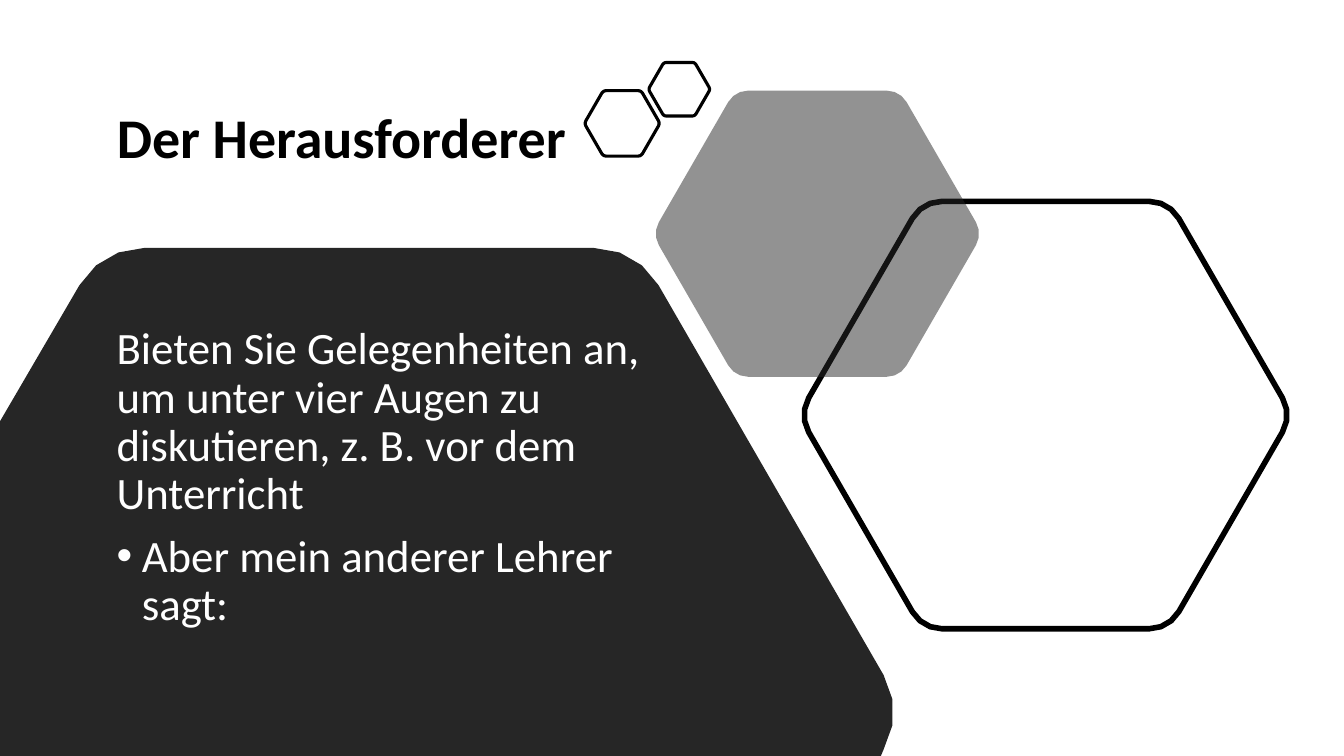
"""Build the slide on the challenger learner type."""
from math import cos, radians, sin, sqrt

from lxml.etree import SubElement
from pptx import Presentation
from pptx.dml.color import RGBColor
from pptx.enum.text import MSO_ANCHOR, MSO_AUTO_SIZE, PP_ALIGN
from pptx.oxml.ns import qn
from pptx.util import Cm, Pt

WIDE, HIGH = 33.87, 19.05
ROUND = 0.08


def paint(color, tone):
    """Set a colour from a hex string."""
    color.rgb = RGBColor.from_string(tone)


def corners(x, y, high):
    """Return the points of a regular hexagon with rounded corners."""
    side = high / sqrt(3)
    bend = ROUND * side * sqrt(3)
    reach = side - bend * 2 / sqrt(3)
    points = []
    for turn in range(240, 600, 60):
        for step in (-30, -10, 10, 30):
            arc = radians(turn + step)
            points.append((x + reach * cos(radians(turn)) + bend * cos(arc),
                           y + reach * sin(radians(turn)) + bend * sin(arc)))
    return points


def hexagon(slide, x, y, high, fill=None, line=None, alpha=None, edge=()):
    """Draw a rounded hexagon, closed along edge points where the slide ends."""
    points = [p for p in corners(x, y, high) if p[0] >= 0 and p[1] <= HIGH]
    points = [(Cm(a), Cm(b)) for a, b in points + list(edge)]
    pen = slide.shapes.build_freeform(*points[0], scale=1.0)
    pen.add_line_segments(points[1:], close=True)
    shape = pen.convert_to_shape()
    shape.shadow.inherit = False
    if fill:
        shape.fill.solid()
        paint(shape.fill.fore_color, fill)
    else:
        shape.fill.background()
    if alpha:
        tint = shape.element.spPr.find(qn("a:solidFill"))[0]
        SubElement(tint, qn("a:alpha"), val=str(alpha * 1000))
    if line:
        paint(shape.line.color, "000000")
        shape.line.width = Pt(line)
    else:
        shape.line.fill.background()


def bullet(para):
    """Give a paragraph a round bullet with a hanging indent."""
    props = para._p.get_or_add_pPr()
    props.set("marL", str(Cm(0.635)))
    props.set("indent", str(Cm(-0.635)))
    SubElement(props, qn("a:buFont"), typeface="Arial")
    SubElement(props, qn("a:buChar"), char="•")


def write(para, text, size, tone, bold=False, dot=False):
    """Fill and format one paragraph."""
    para.text = text
    para.alignment = PP_ALIGN.LEFT
    para.line_spacing = 0.9
    if dot:
        para.space_before = Pt(10)
        bullet(para)
    para.font.name = "Calibri"
    para.font.size = Pt(size)
    para.font.bold = bold
    paint(para.font.color, tone)


def place(shape, left, top, width, height, anchor):
    """Position a text shape and return its wrapped frame."""
    shape.left, shape.top = Cm(left), Cm(top)
    shape.width, shape.height = Cm(width), Cm(height)
    frame = shape.text_frame
    frame.word_wrap = True
    frame.auto_size = MSO_AUTO_SIZE.NONE
    frame.vertical_anchor = anchor
    return frame


def main():
    """Compose and save the slide."""
    deck = Presentation()
    deck.slide_width, deck.slide_height = Cm(WIDE), Cm(HIGH)
    slide = deck.slides.add_slide(deck.slide_layouts[5])

    title = place(slide.shapes.title, 2.69, 1.24, 11.9, 4.57, MSO_ANCHOR.MIDDLE)
    write(title.paragraphs[0], "Der Herausforderer", 40, "000000", bold=True)

    hexagon(slide, 9.3, 17.95, 23.4, fill="262626",
            edge=[(22.2, HIGH), (0, HIGH), (0, 10.62)])
    hexagon(slide, 26.35, 10.46, 10.77, line=4)
    hexagon(slide, 20.6, 5.89, 7.21, fill="262626", alpha=50)
    hexagon(slide, 15.68, 3.11, 1.65, line=2.25)
    hexagon(slide, 17.12, 2.25, 1.35, line=2.25)

    box = slide.shapes.add_textbox(0, 0, 0, 0)
    body = place(box, 2.69, 8.09, 13.84, 8.59, MSO_ANCHOR.TOP)
    write(body.paragraphs[0], "Bieten Sie Gelegenheiten an, um unter vier Augen "
          "zu diskutieren, z. B. vor dem Unterricht", 32, "FFFFFF")
    write(body.add_paragraph(), "Aber mein anderer Lehrer sagt:", 32, "FFFFFF",
          dot=True)
    deck.save("out.pptx")


if __name__ == "__main__":
    main()
